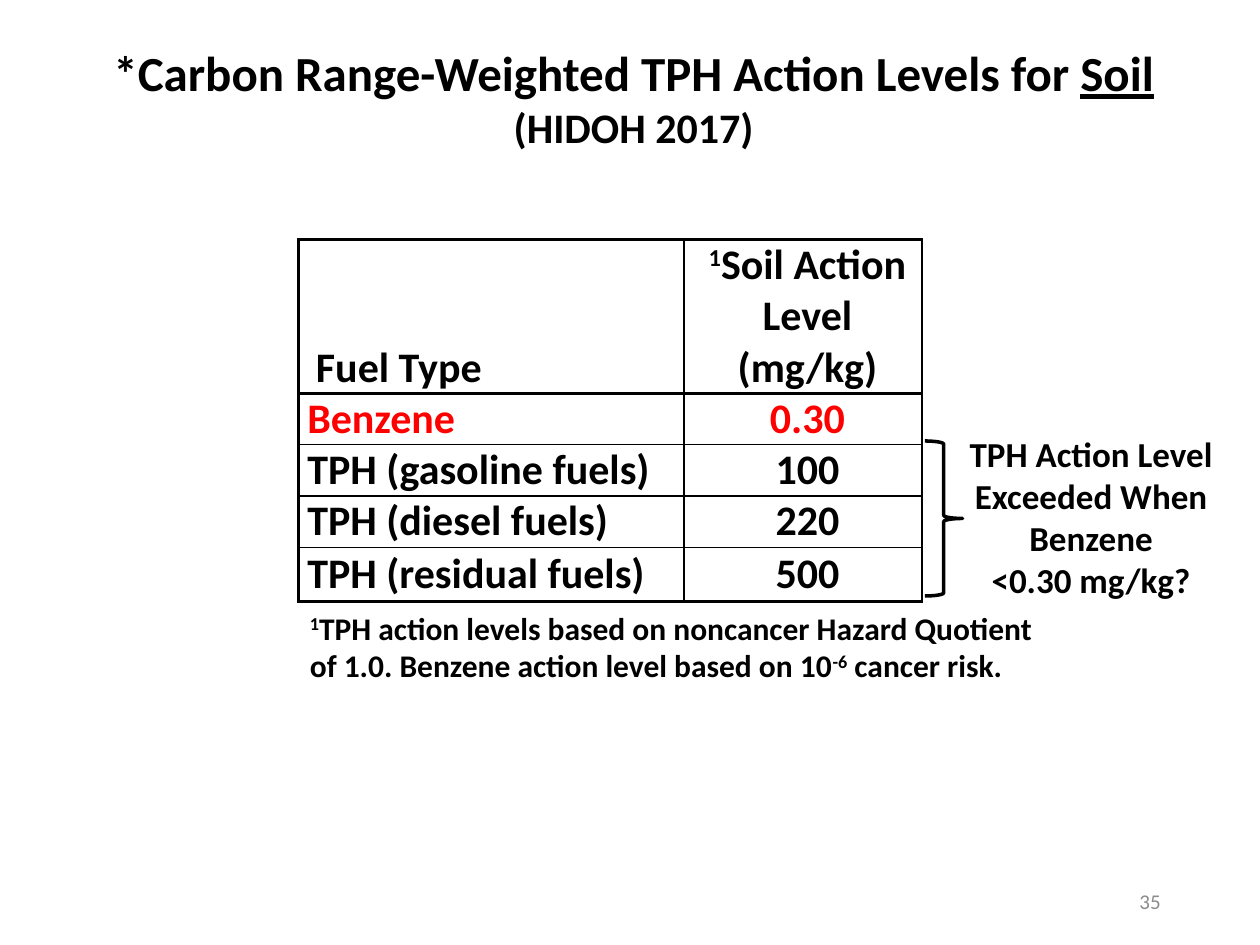
"""Build the slide of weighted TPH action levels for soil."""
from lxml.etree import SubElement as Sub
from pptx import Presentation
from pptx.dml.color import RGBColor as RGB
from pptx.enum.shapes import MSO_SHAPE as Shape
from pptx.enum.text import MSO_ANCHOR as Anchor, PP_ALIGN as Align
from pptx.oxml.ns import qn
from pptx.util import Pt

THEME = {
    "font": "Calibri", "ink": "000000", "alert": "FF0000", "muted": "8C8C8C",
    "title": 28, "body": 24, "label": 20, "note": 18, "page": 12,
    "thick": 1.5, "thin": 1, "brace": 2,
}
LEFT, MID, RIGHT = Align.LEFT, Align.CENTER, Align.RIGHT

TITLE = [
    ([("*Carbon Range-Weighted TPH Action Levels for ", ""), ("Soil", "under")], "title"),
    ([("(HIDOH 2017)", "")], "body"),
]
NOTE = [([
    ("1", "super"),
    ("TPH action levels based on noncancer Hazard Quotient of 1.0. "
     "Benzene action level based on 10", ""),
    ("-6", "super"), (" cancer risk.", ""),
], "note")]
LABEL = [
    ([("TPH Action Level Exceeded When Benzene", "")], "label"),
    ([("<0.30 mg/kg?", "")], "label"),
]
PAGE = [([("35", "")], "page")]
HEAD = [
    [([("Fuel Type", "")], "body")],
    [([("1", "super"), ("Soil Action Level", "")], "body"),
     ([("(mg/kg)", "")], "body")],
]
LEVELS = [
    ("Benzene", "0.30", "alert"),
    ("TPH (gasoline fuels)", "100", "ink"),
    ("TPH (diesel fuels)", "220", "ink"),
    ("TPH (residual fuels)", "500", "ink"),
]
COLS = [220.3, 136.1]
ROWS = [88, 29.3, 29.3, 29.3, 31]
BOXES = [
    (TITLE, (30.2, 20.9, 663.8, 70.6), MID, "ink", Anchor.TOP),
    (NOTE, (170, 344.2, 432, 51.1), LEFT, "ink", Anchor.TOP),
    (PAGE, (508.3, 500.4, 162, 28.8), RIGHT, "muted", Anchor.MIDDLE),
    (LABEL, (540.7, 243.4, 165.6, 104.4), MID, "ink", Anchor.TOP),
]


def color(key):
    return RGB.from_string(THEME[key])


def write(frame, lines, align, ink="ink", bold=True):
    for i, (runs, size) in enumerate(lines):
        para = frame.add_paragraph() if i else frame.paragraphs[0]
        para.alignment = align
        font = para.font
        font.name, font.size, font.bold = THEME["font"], Pt(THEME[size]), bold
        font.color.rgb = color(ink)
        for text, mark in runs:
            run = para.add_run()
            run.text = text
            if mark == "under":
                run.font.underline = True
            elif mark == "super":
                run.font._element.set("baseline", "30000")


def add_box(slide, lines, place, align, ink, anchor):
    frame = slide.shapes.add_textbox(*map(Pt, place)).text_frame
    frame.word_wrap = True
    frame.vertical_anchor = anchor
    write(frame, lines, align, ink, bold=ink == "ink")


def edge(cell, row):
    props = cell._tc.get_or_add_tcPr()
    top = "thick" if row < 2 else "thin"
    base = "thick" if row in (0, len(ROWS) - 1) else "thin"
    sides = {"lnL": "thick", "lnR": "thick", "lnT": top, "lnB": base}
    for at, (tag, width) in enumerate(sides.items()):
        line = Sub(props, qn("a:" + tag), w=str(Pt(THEME[width])))
        fill = Sub(line, qn("a:solidFill"))
        Sub(fill, qn("a:srgbClr"), val=THEME["ink"])
        props.insert(at, line)


def fill_cell(cell, row, col, lines, ink):
    cell.fill.background()
    cell.margin_left = cell.margin_right = Pt(5)
    cell.margin_top = cell.margin_bottom = 0
    cell.vertical_anchor = Anchor.MIDDLE if row else Anchor.BOTTOM
    write(cell.text_frame, lines, MID if col else LEFT, ink)
    for para in cell.text_frame.paragraphs:
        left, hang = (1, -1) if row and not col else (5, 0)
        props = para._p.get_or_add_pPr()
        props.set("marL", str(Pt(left)))
        props.set("indent", str(Pt(hang)))
        if row:
            para.space_before = para.space_after = Pt(6)
    edge(cell, row)


def add_levels(slide):
    size = Pt(sum(COLS)), Pt(sum(ROWS))
    table = slide.shapes.add_table(
        len(ROWS), len(COLS), Pt(170.6), Pt(136.8), *size).table
    table.first_row = table.horz_banding = False
    for col, width in zip(table.columns, COLS):
        col.width = Pt(width)
    for row, height in zip(table.rows, ROWS):
        row.height = Pt(height)
    for col, lines in enumerate(HEAD):
        fill_cell(table.cell(0, col), 0, col, lines, "ink")
    for row, (*texts, ink) in enumerate(LEVELS, 1):
        for col, text in enumerate(texts):
            fill_cell(table.cell(row, col), row, col, [([(text, "")], "body")], ink)


def add_brace(slide):
    brace = slide.shapes.add_shape(
        Shape.RIGHT_BRACE, Pt(528.5), Pt(252), Pt(21.6), Pt(88.6))
    brace.shadow.inherit = False
    brace.fill.background()
    brace.line.color.rgb = color("ink")
    brace.line.width = Pt(THEME["brace"])


def main():
    deck = Presentation()
    deck.slide_width, deck.slide_height = Pt(720), Pt(540)
    slide = deck.slides.add_slide(deck.slide_layouts[6])
    add_levels(slide)
    for box in BOXES:
        add_box(slide, *box)
    add_brace(slide)
    deck.save("out.pptx")


if __name__ == "__main__":
    main()
